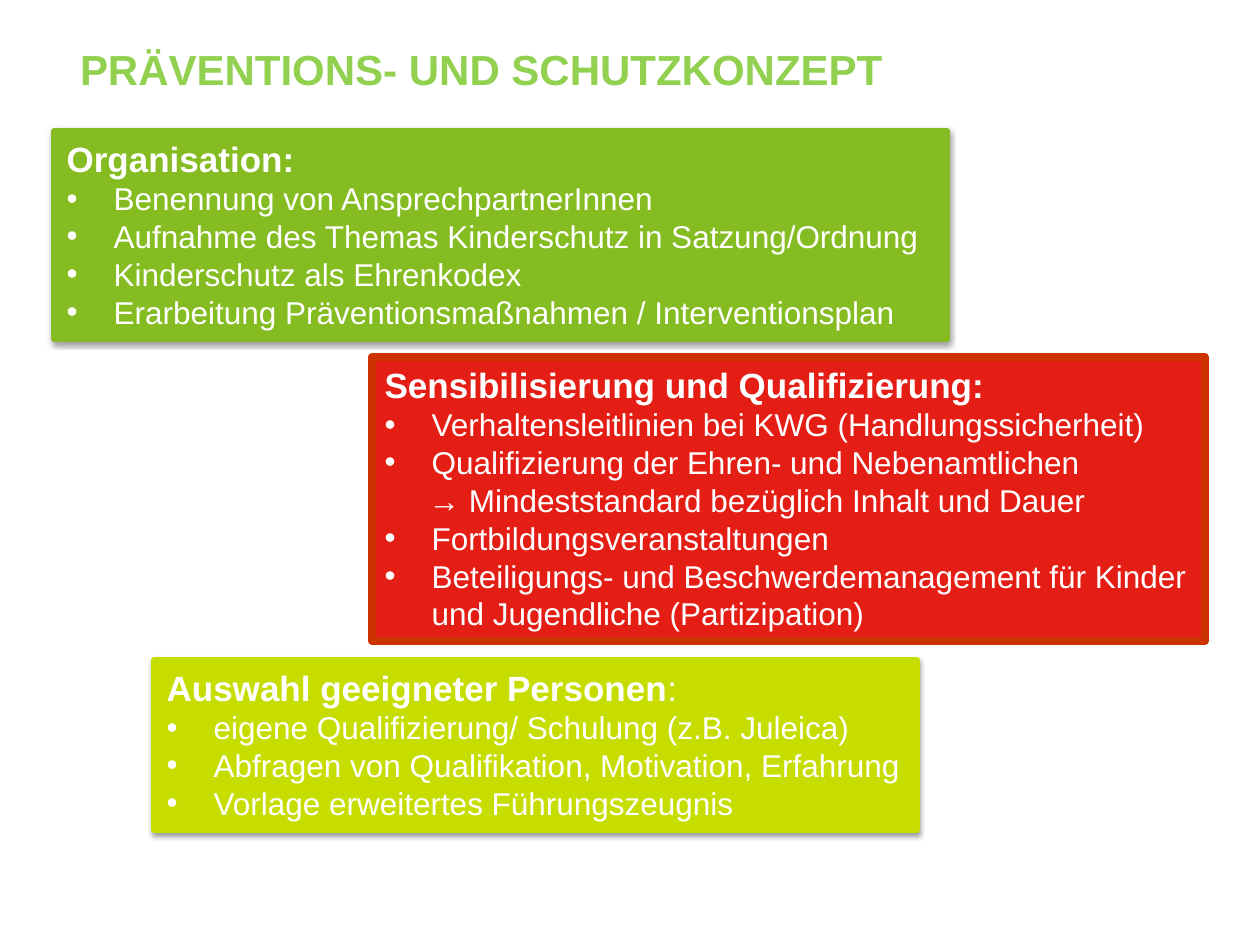
import pptx
import pptx.dml.color
import pptx.enum.text
import pptx.oxml
import pptx.oxml.ns
import pptx.util

EMU_PER_PX = 914400 / 126
THEME = {
    "font": "Arial",
    "white": "FFFFFF", "title": "92D050",
    "green": "85BC21", "red": "E41E15", "red_edge": "CC3300", "lime": "C7DD00",
    "title_size": 24, "heading_size": 20, "list_size": 18,
}
BULLET_INDENT = 47
PLAIN_INDENT = 44
SHADOW = (
    f'<a:effectLst {pptx.oxml.ns.nsdecls("a")}>'
    '<a:outerShdw blurRad="39370" dist="20320" dir="5400000" rotWithShape="0">'
    '<a:srgbClr val="000000"><a:alpha val="38000"/></a:srgbClr>'
    '</a:outerShdw></a:effectLst>'
)


def px(length):
    return pptx.util.Emu(round(length * EMU_PER_PX))


def add_text(paragraph, text, size=THEME["list_size"], color=THEME["white"],
             bold=False, bullet=False, left=0):
    properties = paragraph._p.get_or_add_pPr()
    properties.set("marL", str(px(left)))
    properties.set("indent", str(px(-left if bullet else 0)))
    paragraph.alignment = pptx.enum.text.PP_ALIGN.LEFT
    paragraph.space_before = pptx.util.Pt(0)
    if not paragraph.runs:
        marks = ['buFont typeface="Arial"', 'buChar char="•"'] if bullet else ["buNone"]
        for mark in marks:
            properties.append(pptx.oxml.parse_xml(f'<a:{mark} {pptx.oxml.ns.nsdecls("a")}/>'))
    run = paragraph.add_run()
    run.text = text
    run.font.name = THEME["font"]
    run.font.size = pptx.util.Pt(size)
    run.font.bold = bold
    run.font.color.rgb = pptx.dml.color.RGBColor.from_string(color)


presentation = pptx.Presentation()
presentation.slide_width = px(1260)
presentation.slide_height = px(945)
slide = presentation.slides.add_slide(presentation.slide_layouts[4])
title, *bodies = slide.placeholders

# Heading runs, list lines and look of each panel
panels = [
    {"box": (54, 131, 893, 208), "fill": "green", "edge": "green", "edge_width": 3,
     "shadow": True, "heading": [("Organisation:", True)],
     "lines": ["Benennung von AnsprechpartnerInnen",
               "Aufnahme des Themas Kinderschutz in Satzung/Ordnung",
               "Kinderschutz als Ehrenkodex",
               "Erarbeitung Präventionsmaßnahmen / Interventionsplan"]},
    {"box": (372, 357, 833, 284), "fill": "red", "edge": "red_edge", "edge_width": 4.5,
     "shadow": False, "heading": [("Sensibilisierung und Qualifizierung:", True)],
     "lines": ["Verhaltensleitlinien bei KWG (Handlungssicherheit)",
               "Qualifizierung der Ehren- und Nebenamtlichen",
               "→ Mindeststandard bezüglich Inhalt und Dauer",
               "Fortbildungsveranstaltungen",
               "Beteiligungs- und Beschwerdemanagement für Kinder und Jugendliche (Partizipation)"]},
    {"box": (154, 660, 763, 170), "fill": "lime", "edge": "lime", "edge_width": 3,
     "shadow": True, "heading": [("Auswahl geeigneter Personen", True), (":", False)],
     "lines": ["eigene Qualifizierung/ Schulung (z.B. Juleica)",
               "Abfragen von Qualifikation, Motivation, Erfahrung",
               "Vorlage erweitertes Führungszeugnis"]},
]
title_look = {"box": (64, 26, 1111, 72), "fill": "white", "edge": "white",
              "edge_width": 0.75, "shadow": False}

# Frames of the title and the panels
for shape, look in zip([title, *bodies], [title_look, *panels]):
    shape.left, shape.top, shape.width, shape.height = map(px, look["box"])
    shape.fill.solid()
    shape.fill.fore_color.rgb = pptx.dml.color.RGBColor.from_string(THEME[look["fill"]])
    shape.line.color.rgb = pptx.dml.color.RGBColor.from_string(THEME[look["edge"]])
    shape.line.width = pptx.util.Pt(look["edge_width"])
    if look["shadow"]:
        shape._element.spPr.append(pptx.oxml.parse_xml(SHADOW))
    shape.text_frame.word_wrap = True
    shape.text_frame.auto_size = pptx.enum.text.MSO_AUTO_SIZE.NONE
    shape.text_frame.vertical_anchor = pptx.enum.text.MSO_ANCHOR.TOP

# Title
frame = title.text_frame
frame.margin_left = px(16)
frame.margin_top = frame.margin_right = frame.margin_bottom = 0
frame.paragraphs[0].line_spacing = pptx.util.Pt(39)
add_text(frame.paragraphs[0], "PRÄVENTIONS- UND SCHUTZKONZEPT",
         size=THEME["title_size"], color=THEME["title"], bold=True)

# Panel texts
for body, panel in zip(bodies, panels):
    for text, bold in panel["heading"]:
        add_text(body.text_frame.paragraphs[0], text, size=THEME["heading_size"], bold=bold)
    for line in panel["lines"]:
        bullet = not line.startswith("→")
        add_text(body.text_frame.add_paragraph(), line, bullet=bullet,
                 left=BULLET_INDENT if bullet else PLAIN_INDENT)

# Unused placeholder
for body in bodies[len(panels):]:
    body._element.getparent().remove(body._element)

presentation.save("out.pptx")
